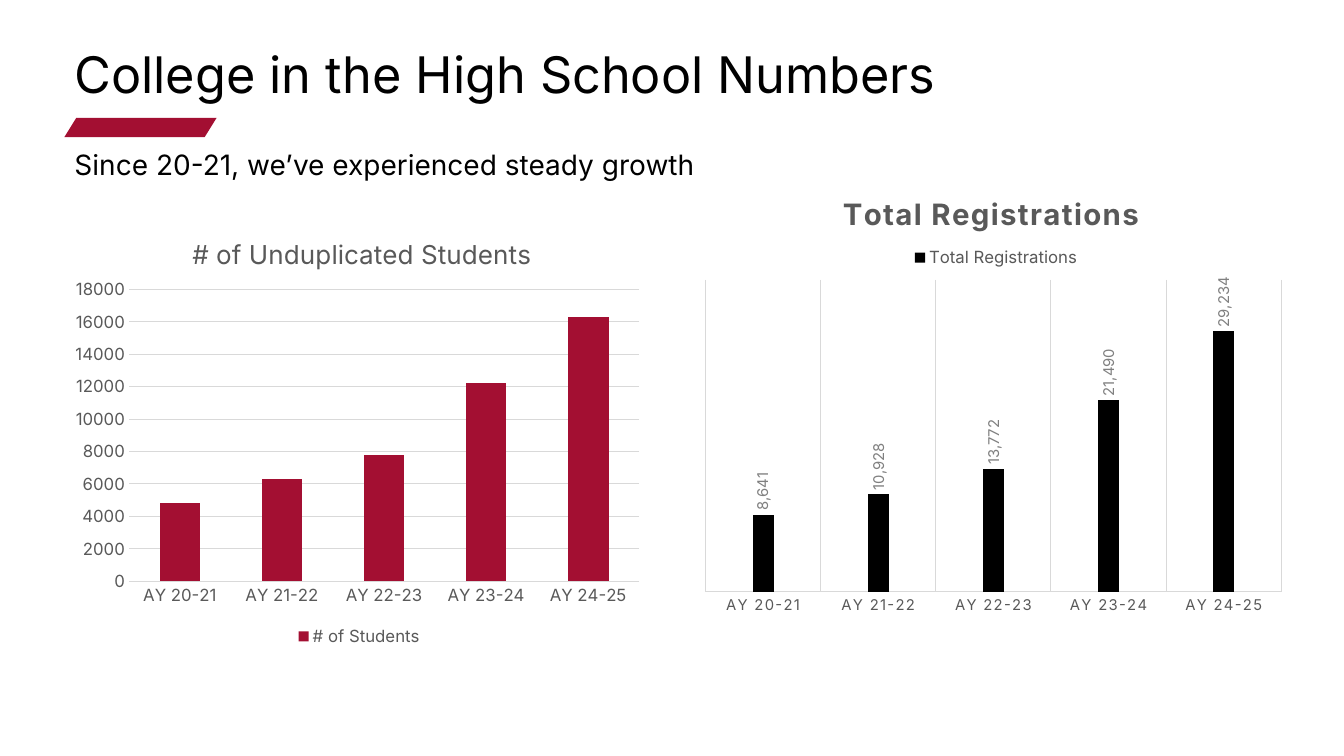
from lxml.etree import SubElement
from pptx import Presentation
from pptx.chart.data import CategoryChartData
from pptx.dml.color import RGBColor
from pptx.enum.chart import XL_CHART_TYPE, XL_LABEL_POSITION, XL_LEGEND_POSITION, XL_TICK_MARK
from pptx.enum.shapes import MSO_SHAPE
from pptx.enum.text import MSO_ANCHOR, MSO_AUTO_SIZE, PP_ALIGN
from pptx.oxml.ns import qn
from pptx.util import Pt

FONT = "Inter"
CRIMSON, BLACK, GRAY, LIGHT_GRAY, LABEL_GRAY = "A30F32", "000000", "595959", "D9D9D9", "808080"
YEARS = [f"AY {year}-{year + 1}" for year in range(20, 25)]


def color(hex_code):
    return RGBColor.from_string(hex_code)


def set_font(font, size, hex_code, bold=False):
    font.name = FONT
    font.size = Pt(size)
    font.bold = bold
    font.color.rgb = color(hex_code)


def set_spacing(element, points):
    """Spread the letters of all text properties inside a chart element."""
    for properties in element.xpath(".//a:defRPr | .//a:rPr"):
        properties.set("spc", str(points * 100))


def set_layout(element, **fractions):
    """Place a chart part by fractions of the chart: x, y and maybe w, h."""
    for old_layout in element.findall(qn("c:layout")):
        element.remove(old_layout)
    layout = element.makeelement(qn("c:layout"))
    manual = SubElement(layout, qn("c:manualLayout"))
    if "w" in fractions:
        SubElement(manual, qn("c:layoutTarget")).set("val", "inner")
    for name in ("x", "y"):
        SubElement(manual, qn(f"c:{name}Mode")).set("val", "edge")
    for name, value in fractions.items():
        SubElement(manual, qn(f"c:{name}")).set("val", str(value))
    overlay = element.find(qn("c:overlay"))
    if overlay is None:
        element.insert(0, layout)
    else:
        overlay.addprevious(layout)


def fill_placeholder(shape, box, text, size, anchor):
    shape.left, shape.top, shape.width, shape.height = map(Pt, box)
    frame = shape.text_frame
    frame.auto_size = MSO_AUTO_SIZE.NONE
    frame.word_wrap = True
    frame.vertical_anchor = anchor
    paragraph = frame.paragraphs[0]
    properties = paragraph._p.get_or_add_pPr()
    properties.set("marL", "0")
    properties.set("indent", "0")
    SubElement(properties, qn("a:buNone"))
    paragraph.alignment = PP_ALIGN.LEFT
    paragraph.line_spacing = 0.9
    paragraph.space_before = Pt(0)
    run = paragraph.add_run()
    run.text = text
    set_font(run.font, size, BLACK)


def add_accent(slide):
    accent = slide.shapes.add_shape(MSO_SHAPE.PARALLELOGRAM, Pt(46), Pt(84.2), Pt(108.7), Pt(13.7))
    accent.adjustments[0] = 0.62
    accent.shadow.inherit = False
    accent.fill.solid()
    accent.fill.fore_color.rgb = color(CRIMSON)
    accent.line.fill.background()


def add_column_chart(slide, box, kind, name, values, hex_code, gap, overlap):
    data = CategoryChartData()
    data.categories = YEARS
    data.add_series(name, values)
    chart = slide.shapes.add_chart(kind, *map(Pt, box), data).chart
    set_font(chart.font, 10, BLACK)
    plot = chart.plots[0]
    plot.gap_width, plot.overlap, plot.vary_by_categories = gap, overlap, False
    series_fill = plot.series[0].format.fill
    series_fill.solid()
    series_fill.fore_color.rgb = color(hex_code)
    return chart


def add_title(chart, text, size, bold, **position):
    frame = chart.chart_title.text_frame
    run = frame.paragraphs[0].add_run()
    run.text = text
    set_font(run.font, size, GRAY, bold)
    chart.chart_title.include_in_layout = False
    set_layout(chart.chart_title._element, **position)


def add_legend(chart, side, **position):
    chart.has_legend = True
    legend = chart.legend
    legend.position = side
    legend.include_in_layout = False
    set_font(legend.font, 12, GRAY)
    set_layout(legend._element, **position)


def style_line(line):
    line.color.rgb = color(LIGHT_GRAY)
    line.width = Pt(0.75)


def style_axis(axis, size, gridlines):
    axis.major_tick_mark = axis.minor_tick_mark = XL_TICK_MARK.NONE
    set_font(axis.tick_labels.font, size, GRAY)
    style_line(axis.format.line)
    axis.has_major_gridlines = gridlines
    if gridlines:
        style_line(axis.major_gridlines.format.line)


def scale_axis(axis, maximum, unit):
    axis.minimum_scale, axis.maximum_scale, axis.major_unit = 0, maximum, unit


def add_upright_labels(series):
    labels = series.data_labels
    labels.show_value = True
    labels.position = XL_LABEL_POSITION.OUTSIDE_END
    labels.number_format = "#,##0"
    labels.number_format_is_linked = False
    set_font(labels.font, 10.6, LABEL_GRAY)
    body = labels._element.find(f"{qn('c:txPr')}/{qn('a:bodyPr')}")
    body.set("rot", "-5400000")
    body.set("vert", "horz")


def add_students_chart(slide):
    chart = add_column_chart(slide, (46, 149.8, 419, 316), XL_CHART_TYPE.COLUMN_STACKED,
                             "# of Students", (4800, 6300, 7800, 12200, 16300), CRIMSON, 150, 100)
    add_title(chart, "# of Unduplicated Students", 18.6, False, x=0.21, y=0.05)
    add_legend(chart, XL_LEGEND_POSITION.BOTTOM, x=0.39, y=0.94)
    style_axis(chart.category_axis, 12, False)
    style_axis(chart.value_axis, 12, True)
    chart.value_axis.format.line.fill.background()
    scale_axis(chart.value_axis, 18000, 2000)
    set_layout(chart._chartSpace.chart.plotArea, x=0.11, y=0.18, w=0.87, h=0.66)


def add_registrations_chart(slide):
    chart = add_column_chart(slide, (495.4, 118, 428.4, 327.6), XL_CHART_TYPE.COLUMN_CLUSTERED,
                             "Total Registrations", (8641, 10928, 13772, 21490, 29234), BLACK, 444, -90)
    add_title(chart, "Total Registrations", 21, True, x=0.24, y=0.05)
    set_spacing(chart.chart_title._element, 1)
    add_legend(chart, XL_LEGEND_POSITION.TOP, x=0.36, y=0.17)
    style_axis(chart.category_axis, 10.6, True)
    set_spacing(chart.category_axis._element, 1)
    chart.value_axis.has_major_gridlines = False
    chart.value_axis.visible = False
    scale_axis(chart.value_axis, 35000, 5000)
    add_upright_labels(chart.plots[0].series[0])
    set_layout(chart._chartSpace.chart.plotArea, x=0.02, y=0.25, w=0.96, h=0.68)


def main():
    presentation = Presentation()
    presentation.slide_width, presentation.slide_height = Pt(960), Pt(540)
    slide = presentation.slides.add_slide(presentation.slide_layouts[1])
    title, body = slide.placeholders
    fill_placeholder(title, (46, 35, 875.5, 39.6), "College in the High School Numbers", 36, MSO_ANCHOR.MIDDLE)
    fill_placeholder(body, (46, 104.4, 869, 28), "Since 20-21, we’ve experienced steady growth", 20, MSO_ANCHOR.TOP)
    add_accent(slide)
    add_students_chart(slide)
    add_registrations_chart(slide)
    presentation.save("out.pptx")


if __name__ == "__main__":
    main()
